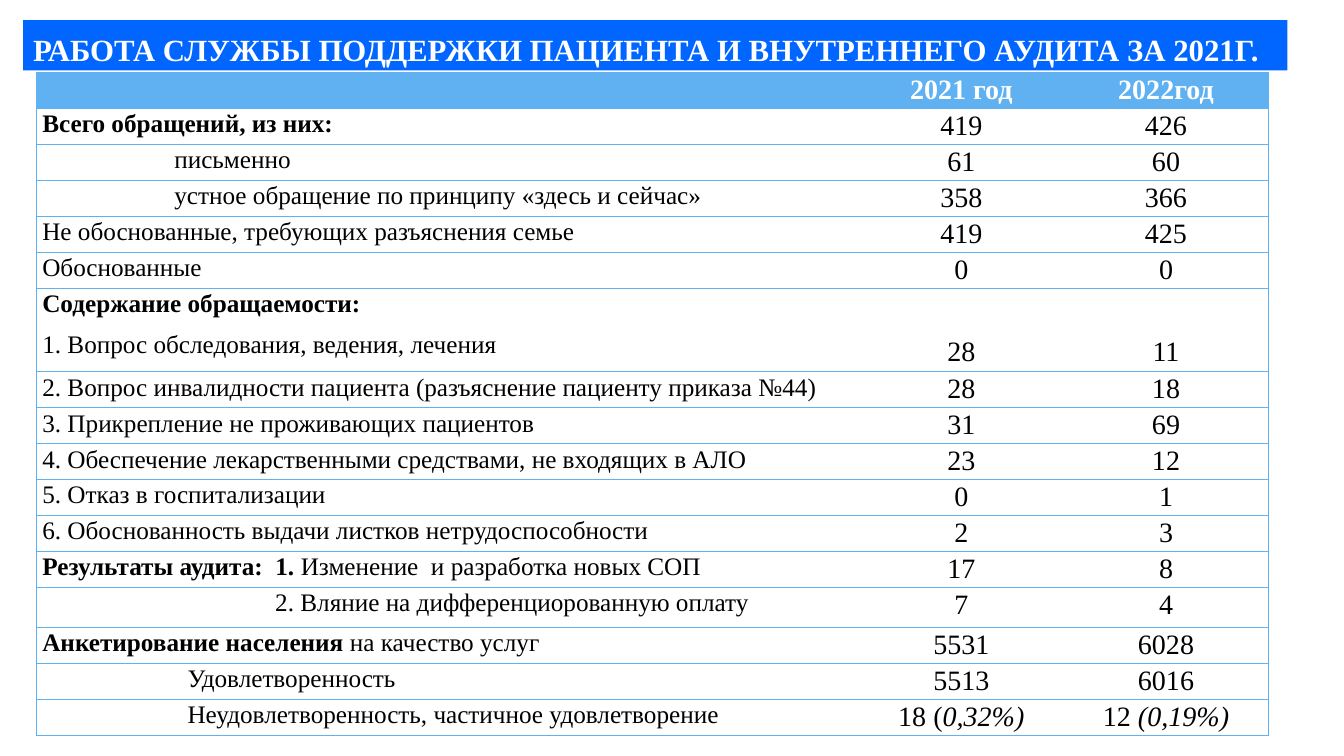
"""Build the slide with the yearly table of the patient support service."""
from lxml.etree import SubElement
from pptx import Presentation
from pptx.dml.color import RGBColor
from pptx.enum.shapes import MSO_SHAPE
from pptx.enum.text import MSO_ANCHOR, PP_ALIGN
from pptx.oxml.ns import qn
from pptx.util import Inches, Pt

TITLE = "РАБОТА СЛУЖБЫ ПОДДЕРЖКИ ПАЦИЕНТА И ВНУТРЕННЕГО АУДИТА ЗА 2021Г."
YEARS = ["2021 год", "2022год"]
PLAIN, BOLD, ITALIC = "plain", "bold", "italic"
MODE, AUDIT, SURVEY = 1.31, 2.31, 1.44

# (indent, label paragraphs made of (text, style) runs, values for each year)
ROWS = [
    (0, [[("Всего обращений, из них:", BOLD)]], ["419", "426"]),
    (MODE, ["письменно"], ["61", "60"]),
    (MODE, ["устное обращение по принципу «здесь и сейчас»"], ["358", "366"]),
    (0, ["Не обоснованные, требующих разъяснения семье"], ["419", "425"]),
    (0, ["Обоснованные"], ["0", "0"]),
    (0, [[("Содержание обращаемости:", BOLD)],
         "1. Вопрос обследования, ведения, лечения"], ["28", "11"]),
    (0, ["2. Вопрос инвалидности пациента (разъяснение пациенту приказа №44)"], ["28", "18"]),
    (0, ["3. Прикрепление не проживающих пациентов"], ["31", "69"]),
    (0, ["4. Обеспечение лекарственными средствами, не входящих в АЛО"], ["23", "12"]),
    (0, ["5. Отказ в госпитализации"], ["0", "1"]),
    (0, ["6. Обоснованность выдачи листков нетрудоспособности"], ["2", "3"]),
    (0, [[("Результаты аудита:  1. ", BOLD),
          ("Изменение  и разработка новых СОП", PLAIN)]], ["17", "8"]),
    (AUDIT, ["2. Вляние на дифференциорованную оплату"], ["7", "4"]),
    (0, [[("Анкетирование населения ", BOLD), ("на качество услуг", PLAIN)]], ["5531", "6028"]),
    (SURVEY, ["Удовлетворенность"], ["5513", "6016"]),
    (SURVEY, ["Неудовлетворенность, частичное удовлетворение"],
     [[("18 (", PLAIN), ("0,32%)", ITALIC)], [("12 ", PLAIN), ("(0,19%)", ITALIC)]]),
]

FONT = "Times New Roman"
WHITE, BLACK, BANNER, SKY = "FFFFFF", "000000", "0066FF", "60B1F2"
COLUMN_WIDTHS = [8.16, 2.03, 2.03]
TABLE_LEFT, TABLE_TOP, TABLE_HEIGHT = 0.36, 0.72, 6.58
TALL_ROWS = {6: 0.83, 13: 0.4}
PADDING = 0.06


def color(hex_code):
    return RGBColor.from_string(hex_code)


def write(frame, paragraphs, size, ink, align, spacing=1.07, after=8):
    for number, content in enumerate(paragraphs):
        paragraph = frame.add_paragraph() if number else frame.paragraphs[0]
        runs = [(content, PLAIN)] if isinstance(content, str) else content
        styles = {style for _, style in runs}
        paragraph.alignment = align
        paragraph.line_spacing = spacing
        paragraph.space_after = Pt(after)
        font = paragraph.font
        font.name, font.size, font.color.rgb = FONT, Pt(size), color(ink)
        font.bold = styles == {BOLD}
        for text, style in runs:
            run = paragraph.add_run()
            run.text = text
            if len(styles) > 1:
                run.font.bold = style == BOLD
                run.font.italic = style == ITALIC


def set_borders(cell, visible):
    properties = cell._tc.get_or_add_tcPr()
    for position, side in enumerate("LRTB"):
        line = SubElement(properties, qn(f"a:ln{side}"), w=str(Pt(0.75)))
        if side in visible:
            fill = SubElement(line, qn("a:solidFill"))
            SubElement(fill, qn("a:srgbClr"), val=SKY)
        else:
            SubElement(line, qn("a:noFill"))


def add_banner(slide):
    banner = slide.shapes.add_shape(
        MSO_SHAPE.RECTANGLE, Inches(0.23), Inches(0.2), Inches(12.54), Inches(0.5))
    banner.shadow.inherit = False
    banner.fill.solid()
    banner.fill.fore_color.rgb = color(BANNER)
    banner.line.fill.background()
    banner.text_frame.word_wrap = True
    banner.text_frame.vertical_anchor = MSO_ANCHOR.TOP
    write(banner.text_frame, [[(TITLE, BOLD)]], 22, WHITE, PP_ALIGN.JUSTIFY, 1.15, 10)


def add_results(slide):
    results = slide.shapes.add_table(
        len(ROWS) + 1, len(COLUMN_WIDTHS), Inches(TABLE_LEFT), Inches(TABLE_TOP),
        Inches(sum(COLUMN_WIDTHS)), Inches(TABLE_HEIGHT)).table
    results.horz_banding = False
    for column, width in zip(results.columns, COLUMN_WIDTHS):
        column.width = Inches(width)
    regular = (TABLE_HEIGHT - sum(TALL_ROWS.values())) / (len(ROWS) + 1 - len(TALL_ROWS))
    header = (0, [], [[(year, BOLD)] for year in YEARS])
    for r, (indent, label, values) in enumerate([header] + ROWS):
        results.rows[r].height = Inches(TALL_ROWS.get(r, regular))
        ink, background = (BLACK, WHITE) if r else (WHITE, SKY)
        for c, paragraphs in enumerate([label] + [[value] for value in values]):
            cell = results.cell(r, c)
            cell.margin_left = Inches(PADDING if c else PADDING + indent)
            cell.margin_right = Inches(PADDING)
            cell.margin_top = cell.margin_bottom = 0
            if c and len(label) > 1:
                cell.vertical_anchor = MSO_ANCHOR.BOTTOM
                cell.margin_bottom = Inches(0.04)
            align = PP_ALIGN.CENTER if c else PP_ALIGN.LEFT
            write(cell.text_frame, paragraphs, 20 if c else 18, ink, align)
            set_borders(cell, "TB" + {0: "L", 2: "R"}.get(c, ""))
            cell.fill.solid()
            cell.fill.fore_color.rgb = color(background)


def main():
    deck = Presentation()
    deck.slide_width, deck.slide_height = Inches(13.33), Inches(7.5)
    slide = deck.slides.add_slide(deck.slide_layouts[6])
    add_banner(slide)
    add_results(slide)
    deck.save("out.pptx")


if __name__ == "__main__":
    main()
